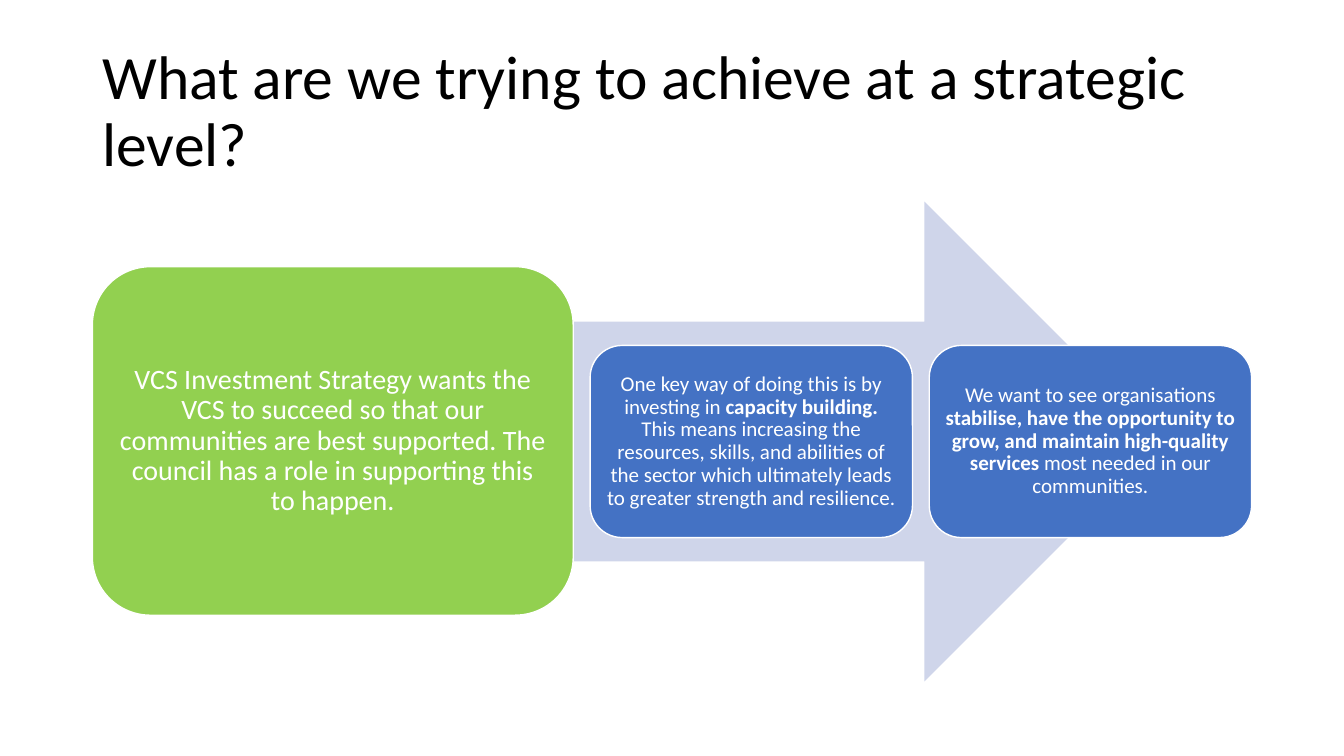
from pptx import Presentation
from pptx.dml.color import RGBColor
from pptx.enum.shapes import MSO_SHAPE
from pptx.enum.text import MSO_ANCHOR, PP_ALIGN
from pptx.util import Pt

PX = 9525  # EMU per px, 96 px to the inch
GAP = 16
FONT = "Calibri"
BLACK, WHITE = "000000", "FFFFFF"
GREEN, BLUE, PALE_BLUE = "92D050", "4472C4", "CFD5EA"

TITLE = "What are we trying to achieve at a strategic level?"
# Each step: width, height, fill, text size, inset, runs of (text, bold)
STEPS = [
    (458, 332, GREEN, 20, 8, [
        ("VCS Investment Strategy wants the VCS to succeed so that our communities "
         "are best supported. The council has a role in supporting this to happen.", False),
    ]),
    (307, 183, BLUE, 15, 6, [
        ("One key way of doing this is by investing in ", False),
        ("capacity building. ", True),
        ("This means increasing the resources, skills, and abilities of the sector "
         "which ultimately leads to greater strength and resilience.", False),
    ]),
    (307, 183, BLUE, 15, 6, [
        ("We want to see organisations ", False),
        ("stabilise, have the opportunity to grow, and maintain high-quality services ", True),
        ("most needed in our communities.", False),
    ]),
]


def px(*lengths):
    return [n * PX for n in lengths]


def color(hex_string):
    return RGBColor.from_string(hex_string)


def add_shape(s, kind, box, fill):
    sp = s.shapes.add_shape(kind, *px(*box))
    sp.shadow.inherit = False
    sp.fill.solid()
    sp.fill.fore_color.rgb = color(fill)
    sp.line.fill.background()
    return sp


def write(tf, runs, size, text_color, align):
    """Fill the frame with one paragraph of (text, bold) runs, centred vertically."""
    tf.word_wrap = True
    tf.vertical_anchor = MSO_ANCHOR.MIDDLE
    p = tf.paragraphs[0]
    p.alignment = align
    p.line_spacing = 0.9
    for text, bold in runs:
        r = p.add_run()
        r.text = text
        r.font.name = FONT
        r.font.size = Pt(size)
        r.font.bold = bold
        r.font.color.rgb = color(text_color)


def add_title(s, box):
    tf = s.shapes.add_textbox(*px(*box)).text_frame
    write(tf, [(TITLE, False)], 44, BLACK, PP_ALIGN.LEFT)


def add_step(s, box, fill, size, inset, runs):
    sp = add_shape(s, MSO_SHAPE.ROUNDED_RECTANGLE, box, fill)
    sp.line.color.rgb = color(WHITE)
    sp.line.width = Pt(1)
    tf = sp.text_frame
    tf.margin_left = tf.margin_top = tf.margin_right = tf.margin_bottom = inset * PX
    write(tf, runs, size, WHITE, PP_ALIGN.CENTER)


def add_process(s, box):
    """Place the steps from left to right over an arrow, all on one centre line."""
    left, top, width, height = box
    arrow_width = width * 85 // 100
    arrow_left = left + (width - arrow_width) // 2
    add_shape(s, MSO_SHAPE.RIGHT_ARROW, (arrow_left, top, arrow_width, height), PALE_BLUE)
    for step_width, step_height, *content in STEPS:
        step_top = top + (height - step_height) // 2
        add_step(s, (left, step_top, step_width, step_height), *content)
        left += step_width + GAP


def main():
    prs = Presentation()
    prs.slide_width, prs.slide_height = px(1280, 720)
    s = prs.slides.add_slide(prs.slide_layouts[6])
    add_title(s, (88, 38, 1104, 139))
    add_process(s, (88, 192, 1104, 457))
    prs.save("out.pptx")


if __name__ == "__main__":
    main()
